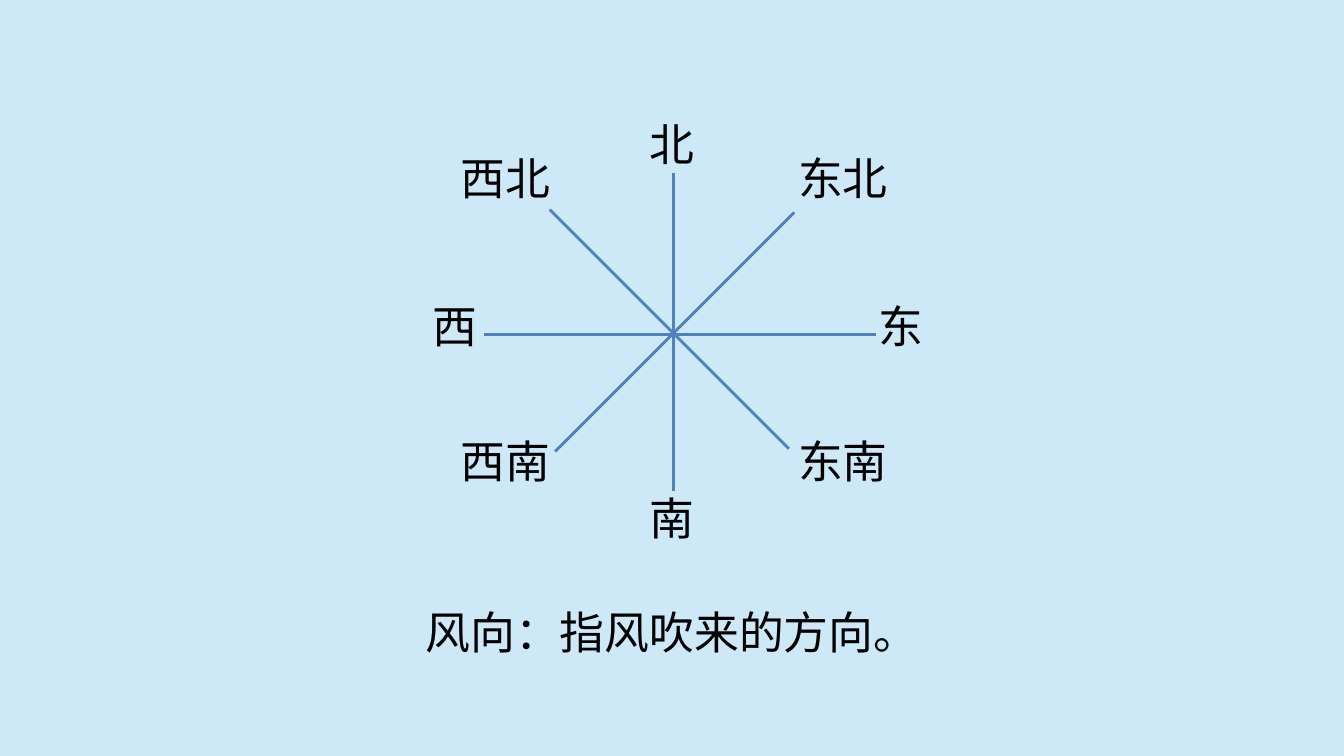
from dataclasses import dataclass

from lxml.etree import SubElement
from pptx import Presentation
from pptx.dml.color import RGBColor
from pptx.enum.shapes import MSO_CONNECTOR
from pptx.enum.text import MSO_AUTO_SIZE, PP_ALIGN
from pptx.oxml.ns import qn
from pptx.slide import Slide
from pptx.util import Inches, Pt


@dataclass(frozen=True)
class Theme:
    background: RGBColor = RGBColor(0xCD, 0xE9, 0xF8)
    text: RGBColor = RGBColor(0, 0, 0)
    axis: RGBColor = RGBColor(0x4F, 0x81, 0xBD)
    font: str = "Noto Sans CJK SC"
    text_size: Pt = Pt(24)
    axis_width: Pt = Pt(1.5)


@dataclass(frozen=True)
class Label:
    text: str
    left: float
    top: float
    width: float
    align: PP_ALIGN = PP_ALIGN.LEFT


@dataclass(frozen=True)
class Axis:
    start_x: float
    start_y: float
    end_x: float
    end_y: float


THEME = Theme()
LABEL_HEIGHT = 0.5
SINGLE, DOUBLE = 0.66, 1.05  # box widths for one and two characters
WEST, EAST = 3.33, 5.84
NORTH, SOUTH = 1.07, 3.18

LABELS = [
    Label("北", 4.67, 0.82, SINGLE, PP_ALIGN.CENTER),
    Label("南", 4.67, 3.6, SINGLE, PP_ALIGN.CENTER),
    Label("东", 6.44, 2.17, SINGLE),
    Label("西", 3.12, 2.17, SINGLE),
    Label("西北", WEST, NORTH, DOUBLE),
    Label("东北", EAST, NORTH, DOUBLE),
    Label("东南", EAST, SOUTH, DOUBLE),
    Label("西南", WEST, SOUTH, DOUBLE),
]
AXES = [
    Axis(5.01, 1.29, 5.01, 3.65),
    Axis(3.6, 2.49, 6.52, 2.49),
    Axis(5.91, 1.58, 4.13, 3.36),
    Axis(4.09, 1.56, 5.87, 3.34),
]
DEFINITION = Label("风向：指风吹来的方向。", 3.06, 4.45, 3.88, PP_ALIGN.CENTER)


def add_label(page: Slide, label: Label) -> None:
    box = page.shapes.add_textbox(
        Inches(label.left), Inches(label.top), Inches(label.width), Inches(LABEL_HEIGHT)
    )
    frame = box.text_frame
    frame.word_wrap = True
    frame.auto_size = MSO_AUTO_SIZE.SHAPE_TO_FIT_TEXT
    para = frame.paragraphs[0]
    para.text = label.text
    para.alignment = label.align
    para.font.size = THEME.text_size
    para.font.color.rgb = THEME.text
    para.font.name = THEME.font
    # Chinese characters take the East Asian typeface
    properties = para._p.pPr.find(qn("a:defRPr"))
    SubElement(properties, qn("a:ea")).set("typeface", THEME.font)


def add_axis(page: Slide, axis: Axis) -> None:
    line = page.shapes.add_connector(
        MSO_CONNECTOR.STRAIGHT,
        Inches(axis.start_x), Inches(axis.start_y),
        Inches(axis.end_x), Inches(axis.end_y),
    )
    line.line.color.rgb = THEME.axis
    line.line.width = THEME.axis_width
    SubElement(line._element.spPr, qn("a:effectLst"))


def main() -> None:
    deck = Presentation()
    deck.slide_width = Inches(10)
    deck.slide_height = deck.slide_width * 9 // 16
    page = deck.slides.add_slide(deck.slide_layouts.get_by_name("Blank"))
    fill = page.background.fill
    fill.solid()
    fill.fore_color.rgb = THEME.background

    for label in LABELS:
        add_label(page, label)
    for axis in AXES:
        add_axis(page, axis)
    add_label(page, DEFINITION)
    deck.save("out.pptx")


if __name__ == "__main__":
    main()
